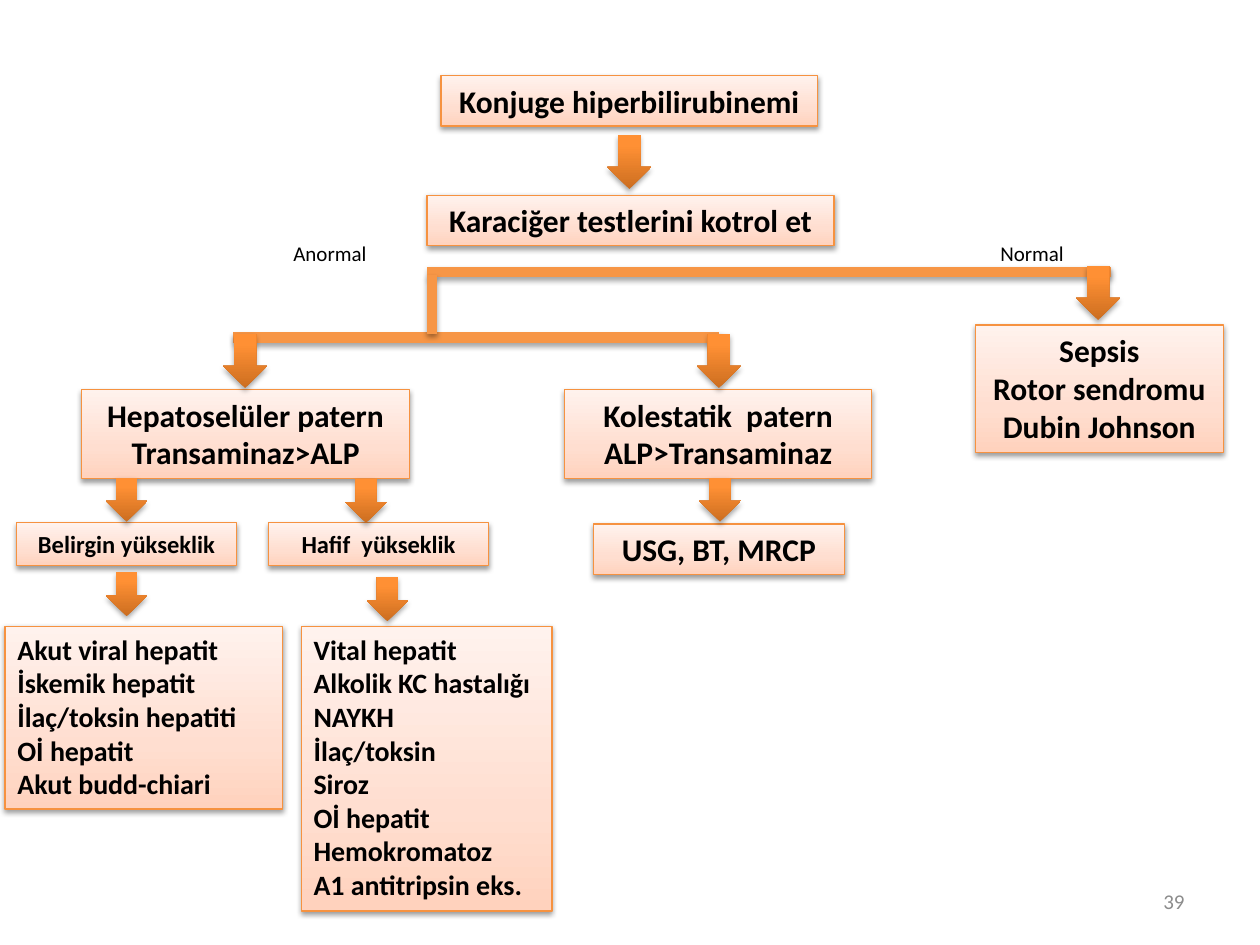
import copy
from dataclasses import dataclass

import lxml.etree
import pptx
import pptx.dml.color
import pptx.enum.shapes
import pptx.enum.text
import pptx.oxml.ns
import pptx.util

Inches = pptx.util.Inches
Pt = pptx.util.Pt
Align = pptx.enum.text.PP_ALIGN
Anchor = pptx.enum.text.MSO_ANCHOR
AutoSize = pptx.enum.text.MSO_AUTO_SIZE
Shape = pptx.enum.shapes.MSO_SHAPE
qn = pptx.oxml.ns.qn


@dataclass(frozen=True)
class Theme:
    font: str = "Calibri"
    text: str = "000000"
    muted: str = "8C8C8C"
    outline: str = "F69240"
    branch: str = "F79646"
    box_stops: tuple = ((0, "FFD2BD"), (0.35, "FFDED0"), (1, "FFF2ED"))
    arrow_stops: tuple = ((0, "CC6E20"), (0.8, "FF9034"), (1, "FF9136"))
    heading: int = 18
    listing: int = 16
    finding: int = 14
    label: int = 12


def rgb(value):
    return pptx.dml.color.RGBColor.from_string(value)


class FlowSlide:
    def __init__(self, slide, theme):
        self.slide = slide
        self.theme = theme

    def _gradient(self, shape, stops):
        shape.fill.gradient()
        shape.fill.gradient_angle = 90
        stop_list = shape._element.spPr.find(".//" + qn("a:gsLst"))
        stop_list.append(copy.deepcopy(stop_list[-1]))
        for stop, (position, color) in zip(shape.fill.gradient_stops, stops):
            stop.position = position
            stop.color.rgb = rgb(color)

    def _shadow(self, shape, distance, opacity):
        effects = lxml.etree.SubElement(shape._element.spPr, qn("a:effectLst"))
        shadow = lxml.etree.SubElement(
            effects, qn("a:outerShdw"), blurRad=str(Pt(3.1)),
            dist=str(Pt(distance)), dir="5400000", rotWithShape="0")
        color = lxml.etree.SubElement(shadow, qn("a:srgbClr"), val="000000")
        lxml.etree.SubElement(color, qn("a:alpha"), val=str(opacity * 1000))

    def _write(self, shape, lines, size, align, color, bold=False):
        frame = shape.text_frame
        frame.word_wrap = True
        frame.text = "\n".join(lines)
        for paragraph in frame.paragraphs:
            paragraph.alignment = align
            paragraph.font.name = self.theme.font
            paragraph.font.size = Pt(size)
            paragraph.font.bold = bold
            paragraph.font.color.rgb = rgb(color)
        return frame

    def box(self, left, top, width, height, lines, size, align=Align.CENTER):
        shape = self.slide.shapes.add_shape(
            Shape.RECTANGLE, Inches(left), Inches(top), Inches(width), Inches(height))
        self._gradient(shape, self.theme.box_stops)
        shape.line.color.rgb = rgb(self.theme.outline)
        shape.line.width = Pt(0.75)
        self._shadow(shape, 1.6, 38)
        frame = self._write(shape, lines, size, align, self.theme.text, bold=True)
        frame.vertical_anchor = Anchor.TOP
        frame.auto_size = AutoSize.SHAPE_TO_FIT_TEXT

    def arrow(self, left, top, width, height):
        shape = self.slide.shapes.add_shape(
            Shape.DOWN_ARROW, Inches(left), Inches(top), Inches(width), Inches(height))
        self._gradient(shape, self.theme.arrow_stops)
        shape.line.fill.background()
        self._shadow(shape, 1.8, 35)

    def branch(self, start, end):
        line = self.slide.shapes.add_connector(
            pptx.enum.shapes.MSO_CONNECTOR.STRAIGHT,
            *(Inches(value) for value in start + end))
        line.line.color.rgb = rgb(self.theme.branch)
        line.line.width = Pt(6)
        self._shadow(line, 1.8, 35)

    def label(self, left, top, width, height, text):
        shape = self.slide.shapes.add_textbox(
            Inches(left), Inches(top), Inches(width), Inches(height))
        frame = self._write(shape, [text], self.theme.label, Align.LEFT, self.theme.text)
        frame.margin_right = 0

    def page_number(self, text):
        shape = self.slide.shapes.add_textbox(
            Inches(7.17), Inches(6.95), Inches(2.33), Inches(0.4))
        frame = self._write(shape, [text], self.theme.label, Align.RIGHT, self.theme.muted)
        frame.vertical_anchor = Anchor.MIDDLE


def main():
    presentation = pptx.Presentation()
    presentation.slide_width = Inches(10)
    presentation.slide_height = Inches(7.5)
    theme = Theme()
    flow = FlowSlide(
        presentation.slides.add_slide(presentation.slide_layouts[6]), theme)

    for start, end in (
        ((8.82, 2.16), (3.39, 2.16)),
        ((5.71, 2.68), (1.85, 2.68)),
        ((3.43, 2.65), (3.43, 2.18)),
    ):
        flow.branch(start, end)

    for left, top, width, height, lines in (
        (3.5, 0.6, 2.99, 0.4, ["Konjuge hiperbilirubinemi"]),
        (3.39, 1.55, 3.23, 0.4, ["Karaciğer testlerini kotrol et"]),
        (7.74, 2.58, 1.97, 1.01, ["Sepsis", "Rotor sendromu", "Dubin Johnson"]),
        (0.65, 3.09, 2.6, 0.71, ["Hepatoselüler patern", "Transaminaz>ALP"]),
        (4.48, 3.09, 2.44, 0.71, ["Kolestatik  patern", "ALP>Transaminaz"]),
        (4.71, 4.16, 1.99, 0.4, ["USG, BT, MRCP"]),
    ):
        flow.box(left, top, width, height, lines, theme.heading)

    for left, text in ((0.13, "Belirgin yükseklik"), (2.13, "Hafif  yükseklik")):
        flow.box(left, 4.15, 1.75, 0.34, [text], theme.finding)

    for left, width, height, lines in (
        (0.04, 2.2, 1.45, ["Akut viral hepatit", "İskemik hepatit", "İlaç/toksin hepatiti",
                           "Oİ hepatit", "Akut budd-chiari"]),
        (2.39, 1.99, 2.26, ["Vital hepatit", "Alkolik KC hastalığı", "NAYKH", "İlaç/toksin",
                            "Siroz", "Oİ hepatit", "Hemokromatoz", "A1 antitripsin eks."]),
    ):
        flow.box(left, 4.97, width, height, lines, theme.listing, Align.LEFT)

    for left, top in ((4.82, 1.07), (8.54, 2.11), (1.77, 2.65), (5.53, 2.65)):
        flow.arrow(left, top, 0.35, 0.43)
    for left, top in ((0.84, 3.79), (2.74, 3.8), (5.55, 3.79), (0.84, 4.54), (2.91, 4.58)):
        flow.arrow(left, top, 0.33, 0.35)

    flow.label(2.23, 1.86, 0.84, 0.3, "Anormal")
    flow.label(7.84, 1.86, 0.71, 0.3, "Normal")
    flow.page_number("39")
    presentation.save("out.pptx")


if __name__ == "__main__":
    main()
